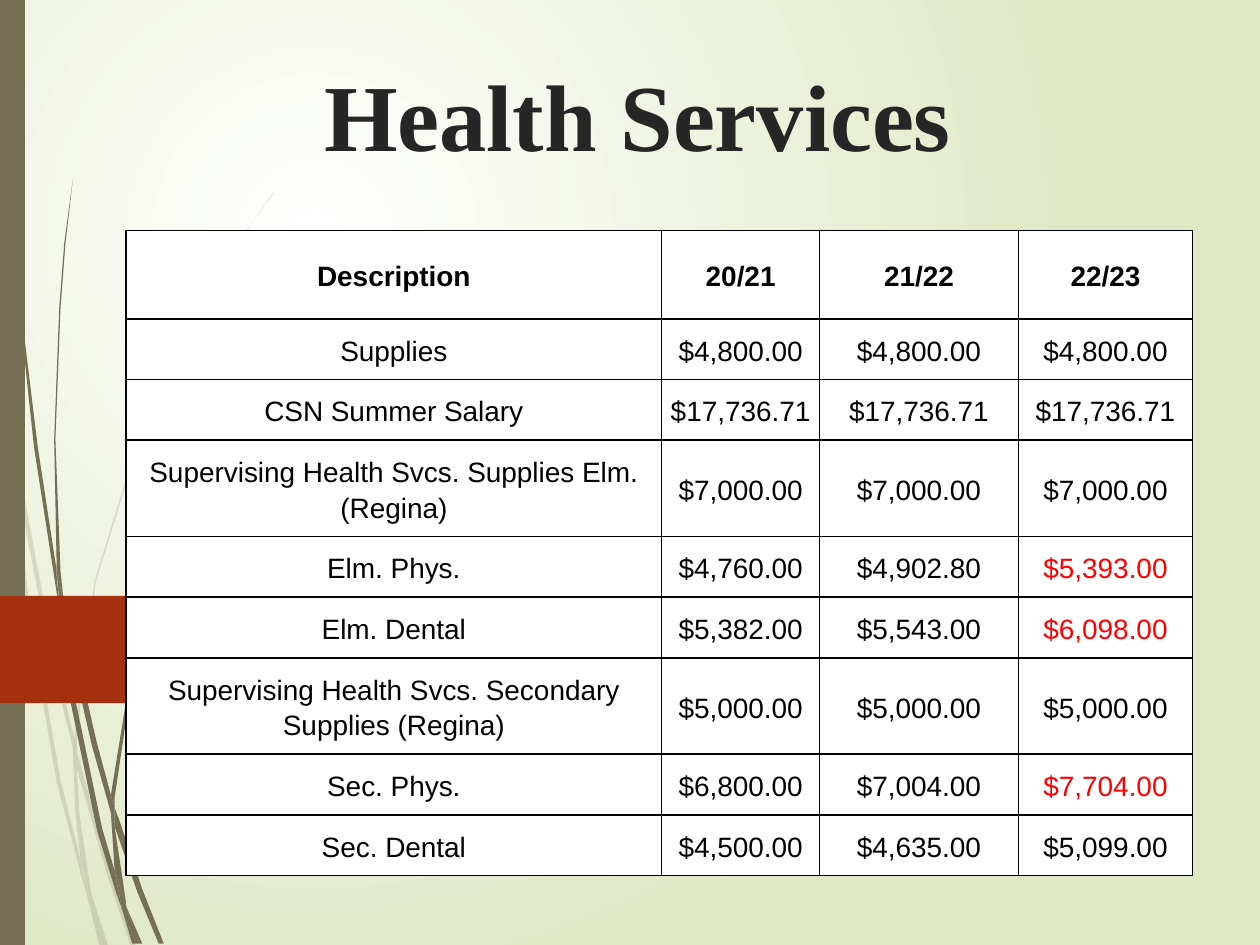
from lxml import etree
from pptx import Presentation
from pptx import util as u
from pptx.dml.color import RGBColor
from pptx.enum import text
from pptx.oxml.ns import qn

COLORS = {"white": "FFFFFF", "pale": "DFE8C4", "olive": "766F54", "rust": "A53010",
          "title": "262626", "black": "000000", "red": "FF0000"}
UNIT = u.Cm(2.54) / 100  # outlines are given in hundredths of an inch

# Outlines as x, y pairs
FAINT_GRASS = [
    [(8, 350), (6, 322), (0, 282), (0, 299), (7, 344)],
    [(40, 522), (59, 599), (59, 586), (43, 520), (10, 345), (12, 376)],
    [(64, 607), (61, 596), (61, 610), (85, 694), (104, 751), (108, 751), (88, 692)],
    [(83, 751), (86, 751), (73, 711)],
    [(64, 683), (48, 619), (22, 469), (12, 376), (8, 350), (19, 470), (45, 621),
     (64, 693), (70, 714), (69, 707)],
    [(58, 599), (60, 646), (64, 683), (67, 692), (73, 711), (72, 706), (63, 646),
     (61, 610), (61, 608)],
    [(61, 584), (76, 462), (111, 349), (159, 245), (187, 198), (201, 175), (217, 154),
     (217, 153), (201, 175), (186, 197), (158, 244), (110, 348), (75, 461), (59, 584),
     (59, 586), (61, 596)],
    [(70, 714), (79, 751), (82, 751)],
    [(61, 608), (61, 610), (61, 596), (59, 586), (58, 599)],
    [(67, 692), (65, 683), (69, 707), (70, 714), (82, 751), (83, 751), (73, 711)],
]
DARK_GRASS = [
    [(5, 110), (14, 233), (27, 355), (46, 477), (47, 481), (45, 457), (45, 453),
     (30, 355), (15, 232), (6, 109), (4, 48), (3, 0), (2, 0), (3, 48)],
    [(73, 592), (88, 645), (88, 633), (88, 631), (77, 590), (50, 472), (53, 505)],
    [(94, 649), (91, 641), (91, 656), (109, 708), (126, 749), (130, 749), (113, 706)],
    [(91, 691), (81, 657), (60, 556), (53, 505), (47, 477), (56, 557), (77, 659),
     (92, 708), (97, 722), (96, 717)],
    [(50, 472), (48, 453), (44, 349), (48, 245), (52, 193), (58, 141), (51, 193),
     (47, 245), (43, 349), (45, 449), (49, 472)],
    [(110, 749), (113, 749), (100, 719)],
    [(47, 477), (53, 505), (50, 472), (49, 472), (45, 449), (45, 453)],
    [(91, 633), (103, 552), (131, 476), (169, 406), (191, 374), (203, 359), (216, 344),
     (215, 344), (203, 358), (191, 373), (168, 405), (129, 474), (101, 551), (88, 631),
     (91, 641)],
    [(97, 722), (105, 749), (108, 749)],
    [(88, 645), (91, 691), (96, 706), (100, 719), (100, 716), (91, 656), (90, 651)],
    [(88, 645), (90, 651), (91, 656), (91, 641), (88, 631), (88, 633)],
    [(96, 706), (91, 691), (96, 717), (97, 722), (108, 749), (110, 749), (100, 719)],
]
SIDE_BAR = [(0, 0), (20, 0), (20, 750), (0, 750)]
ARROW_TAB = [(-3, 473), (107, 473), (110, 474), (149, 513), (150, 515.5), (149, 518),
             (110, 557), (107, 558), (-3, 558)]

HEADER = ["Description", "20/21", "21/22", "22/23"]
BUDGET = [
    ["Supplies", "$4,800.00", "$4,800.00", "$4,800.00"],
    ["CSN Summer Salary", "$17,736.71", "$17,736.71", "$17,736.71"],
    ["Supervising Health Svcs. Supplies Elm. (Regina)",
     "$7,000.00", "$7,000.00", "$7,000.00"],
    ["Elm. Phys.", "$4,760.00", "$4,902.80", "$5,393.00"],
    ["Elm. Dental", "$5,382.00", "$5,543.00", "$6,098.00"],
    ["Supervising Health Svcs. Secondary Supplies (Regina)",
     "$5,000.00", "$5,000.00", "$5,000.00"],
    ["Sec. Phys.", "$6,800.00", "$7,004.00", "$7,704.00"],
    ["Sec. Dental", "$4,500.00", "$4,635.00", "$5,099.00"],
]
INCREASES = {"$5,393.00", "$6,098.00", "$7,704.00"}
COLUMN_WIDTHS = [10.8, 3.18, 4.01, 3.51]
ROW_HEIGHTS = [1.78, 1.04, 0.97, 1.02, 0.84, 1.02, 1.19, 1.19, 1.19]


def rgb(name):
    return RGBColor.from_string(COLORS[name])


def write(frame, words, *, font="Arial", size=16, color="black", bold=False, spacing=1.0):
    """Put one centred paragraph into a text frame."""
    para = frame.paragraphs[0]
    para.alignment = text.PP_ALIGN.CENTER
    para.line_spacing = spacing
    span = para.add_run()
    span.text = words
    span.font.name = font
    span.font.size = u.Pt(size)
    span.font.bold = bold
    span.font.color.rgb = rgb(color)


class Page:
    def __init__(self, deck):
        self.slide = deck.slides.add_slide(deck.slide_layouts[6])
        self.shapes = self.slide.shapes

    def background(self, centre, edge):
        """Fill the page with a round gradient centred in the upper left."""
        background = self.slide.background
        background.fill.gradient()
        for stop, color in zip(background.fill.gradient_stops, (centre, edge)):
            stop.color.rgb = rgb(color)
        gradient = background.element.find(".//" + qn("a:gradFill"))
        gradient.remove(gradient.find(qn("a:lin")))
        path = etree.SubElement(gradient, qn("a:path"), path="circle")
        etree.SubElement(path, qn("a:fillToRect"),
                         l="50000", t="50000", r="100000", b="100000")

    def outline(self, points, color, alpha=None, parent=None):
        builder = (parent or self.shapes).build_freeform(*points[0], scale=UNIT)
        builder.add_line_segments(points[1:], close=True)
        shape = builder.convert_to_shape()
        shape.shadow.inherit = False
        shape.fill.solid()
        shape.fill.fore_color.rgb = rgb(color)
        shape.line.fill.background()
        if alpha:
            tint = shape.fill._xPr.find(".//" + qn("a:srgbClr"))
            etree.SubElement(tint, qn("a:alpha"), val=str(alpha * 1000))

    def grass(self, blades, alpha=None):
        group = self.shapes.add_group_shape()
        for blade in blades:
            self.outline(blade, "olive", alpha, group.shapes)

    def border(self, cell, color="black", width=1):
        properties = cell._tc.get_or_add_tcPr()
        for index, side in enumerate(("lnL", "lnR", "lnT", "lnB")):
            line = etree.Element(qn("a:" + side), w=str(u.Pt(width)))
            fill = etree.SubElement(line, qn("a:solidFill"))
            etree.SubElement(fill, qn("a:srgbClr"), val=COLORS[color])
            properties.insert(index, line)

    def table(self, rows, left, top):
        table = self.shapes.add_table(
            len(rows), len(rows[0]), u.Cm(left), u.Cm(top),
            u.Cm(sum(COLUMN_WIDTHS)), u.Cm(sum(ROW_HEIGHTS))).table
        for column, width in zip(table.columns, COLUMN_WIDTHS):
            column.width = u.Cm(width)
        for index, (row, height) in enumerate(zip(table.rows, ROW_HEIGHTS)):
            row.height = u.Cm(height)
            for cell, words in zip(row.cells, rows[index]):
                cell.fill.solid()
                cell.fill.fore_color.rgb = rgb("white")
                cell.vertical_anchor = text.MSO_ANCHOR.MIDDLE
                cell.margin_left = cell.margin_right = u.Cm(0.08)
                cell.margin_top = cell.margin_bottom = u.Cm(0.25)
                write(cell.text_frame, words, bold=index == 0, spacing=1.15,
                      color="red" if words in INCREASES else "black")
                self.border(cell)

    def title(self, words, left, top, width, height):
        box = self.shapes.add_textbox(*map(u.Cm, (left, top, width, height)))
        frame = box.text_frame
        frame.word_wrap = True
        frame.vertical_anchor = text.MSO_ANCHOR.BOTTOM
        write(frame, words, font="Times New Roman", size=54, color="title", bold=True)


def main():
    deck = Presentation()
    deck.slide_width, deck.slide_height = u.Cm(25.4), u.Cm(19.05)
    page = Page(deck)

    # Backdrop
    page.background("white", "pale")
    page.grass(FAINT_GRASS, alpha=20)
    page.grass(DARK_GRASS)
    page.outline(SIDE_BAR, "olive")
    page.outline(ARROW_TAB, "rust")

    # Content
    page.table([HEADER] + BUDGET, 2.54, 4.65)
    page.title(" Health Services", -0.08, 0, 25.4, 3.56)
    deck.save("out.pptx")


if __name__ == "__main__":
    main()
